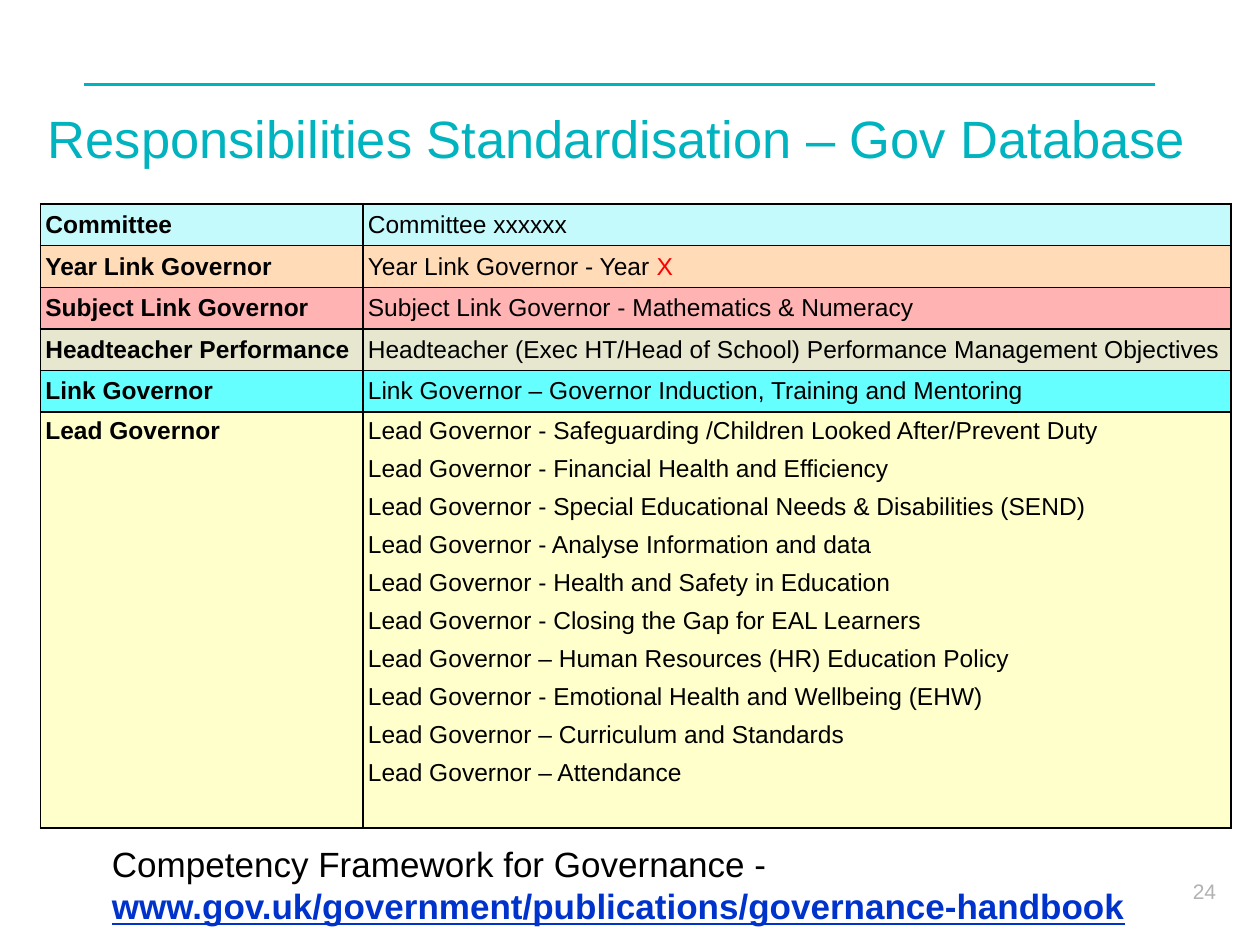
from pptx import Presentation
from pptx.dml.color import RGBColor
from pptx.enum.shapes import MSO_CONNECTOR
from pptx.enum.text import MSO_ANCHOR, PP_ALIGN
from pptx.oxml import parse_xml
from pptx.oxml.ns import nsdecls
from pptx.util import Inches, Pt

THEME = {
    "font": "Arial",
    "teal": "00B3BE", "black": "000000", "red": "FF0000",
    "link": "0033CC", "grey": "B2B2B2",
    "title": 30, "body": 14, "footer": 20, "number": 12,
}

# Content
TITLE = "Responsibilities Standardisation – Gov Database"
LEAD_ROLES = [
    "Lead Governor - Safeguarding /Children Looked After/Prevent Duty",
    "Lead Governor - Financial Health and Efficiency",
    "Lead Governor - Special Educational Needs & Disabilities (SEND)",
    "Lead Governor - Analyse Information and data",
    "Lead Governor - Health and Safety in Education",
    "Lead Governor - Closing the Gap for EAL Learners",
    "Lead Governor – Human Resources (HR) Education Policy",
    "Lead Governor - Emotional Health and Wellbeing (EHW)",
    "Lead Governor – Curriculum and Standards",
    "Lead Governor – Attendance",
]
YEAR_PLACEHOLDER = "X"
# category, responsibilities, row fill
RESPONSIBILITIES = [
    ("Committee", ["Committee xxxxxx"], "C5FAFD"),
    ("Year Link Governor", ["Year Link Governor - Year "], "FFDBB7"),
    ("Subject Link Governor", ["Subject Link Governor - Mathematics & Numeracy"], "FFB3B3"),
    ("Headteacher Performance",
     ["Headteacher (Exec HT/Head of School) Performance Management Objectives"], "E7E7CF"),
    ("Link Governor", ["Link Governor – Governor Induction, Training and Mentoring"], "66FFFF"),
    ("Lead Governor", LEAD_ROLES, "FFFFCC"),
]
FRAMEWORK = "Competency Framework for Governance - "
FRAMEWORK_URL = "www.gov.uk/government/publications/governance-handbook"
PAGE_NUMBER = "24"

COLUMN_WIDTHS = [2.56, 6.89]
ROW_HEIGHT, LEAD_HEIGHT = 0.33, 3.3


def style(run, size, color="black", bold=False, underline=False):
    font = run.font
    font.name, font.size = THEME["font"], Pt(THEME[size])
    font.color.rgb = RGBColor.from_string(THEME[color])
    font.bold, font.underline = bold, underline


def add_run(paragraph, text, *args, **kwargs):
    run = paragraph.add_run()
    run.text = text
    style(run, *args, **kwargs)


def add_text(slide, left, top, width, height):
    frame = slide.shapes.add_textbox(*map(Inches, (left, top, width, height))).text_frame
    frame.word_wrap = True
    return frame.paragraphs[0]


def fill_cell(cell, lines, fill, bold):
    cell.margin_left = cell.margin_right = Inches(0.04)
    cell.margin_top = cell.margin_bottom = Inches(0.04)
    several = lines is LEAD_ROLES
    cell.text_frame.text = "\n".join(lines)
    for paragraph in cell.text_frame.paragraphs:
        if several:
            paragraph.space_after = Pt(6)
        for run in paragraph.runs:
            style(run, "body", bold=bold)
    # Borders come before the fill in the cell properties
    properties = cell._tc.get_or_add_tcPr()
    for side in ("lnL", "lnR", "lnT", "lnB"):
        properties.append(parse_xml(
            f'<a:{side} {nsdecls("a")} w="12700"><a:solidFill>'
            f'<a:srgbClr val="{THEME["black"]}"/></a:solidFill></a:{side}>'))
    cell.fill.solid()
    cell.fill.fore_color.rgb = RGBColor.from_string(fill)


def main():
    prs = Presentation()
    prs.slide_width, prs.slide_height = Inches(10), Inches(7.5)
    slide = prs.slides.add_slide(prs.slide_layouts[5])

    # Rule above the title
    rule = slide.shapes.add_connector(
        MSO_CONNECTOR.STRAIGHT, *map(Inches, (0.67, 0.67, 9.17, 0.67)))
    rule.line.color.rgb = RGBColor.from_string(THEME["teal"])
    rule.line.width = Pt(1.5)
    rule._element.spPr.append(parse_xml(f'<a:effectLst {nsdecls("a")}/>'))

    # Title
    title = slide.shapes.title
    title.left, title.top, title.width, title.height = map(Inches, (0.28, 0.79, 9.54, 1.25))
    title.text_frame.text = TITLE
    title.text_frame.vertical_anchor = MSO_ANCHOR.TOP
    heading = title.text_frame.paragraphs[0]
    heading.alignment = PP_ALIGN.LEFT
    style(heading.runs[0], "title", "teal")

    # Responsibilities table
    heights = [ROW_HEIGHT] * (len(RESPONSIBILITIES) - 1) + [LEAD_HEIGHT]
    table = slide.shapes.add_table(
        len(RESPONSIBILITIES), len(COLUMN_WIDTHS), Inches(0.32), Inches(1.62),
        Inches(sum(COLUMN_WIDTHS)), Inches(sum(heights))).table
    table.first_row = table.horz_banding = False
    for column, width in zip(table.columns, COLUMN_WIDTHS):
        column.width = Inches(width)
    for row, height, (category, duties, fill) in zip(table.rows, heights, RESPONSIBILITIES):
        row.height = Inches(height)
        anchor = MSO_ANCHOR.TOP if duties is LEAD_ROLES else MSO_ANCHOR.MIDDLE
        for cell, lines, bold in zip(row.cells, ([category], duties), (True, False)):
            fill_cell(cell, lines, fill, bold)
            cell.vertical_anchor = anchor
    year_duty = table.cell(1, 1).text_frame.paragraphs[0]
    add_run(year_duty, YEAR_PLACEHOLDER, "body", "red")

    # Framework reference
    reference = add_text(slide, 0.79, 6.64, 9.19, 0.77)
    add_run(reference, FRAMEWORK, "footer")
    add_run(reference, FRAMEWORK_URL, "footer", "link", bold=True, underline=True)

    # Page number
    number = add_text(slide, 7.83, 6.92, 1.92, 0.3)
    number.alignment = PP_ALIGN.RIGHT
    add_run(number, PAGE_NUMBER, "number", "grey")

    prs.save("out.pptx")


if __name__ == "__main__":
    main()
